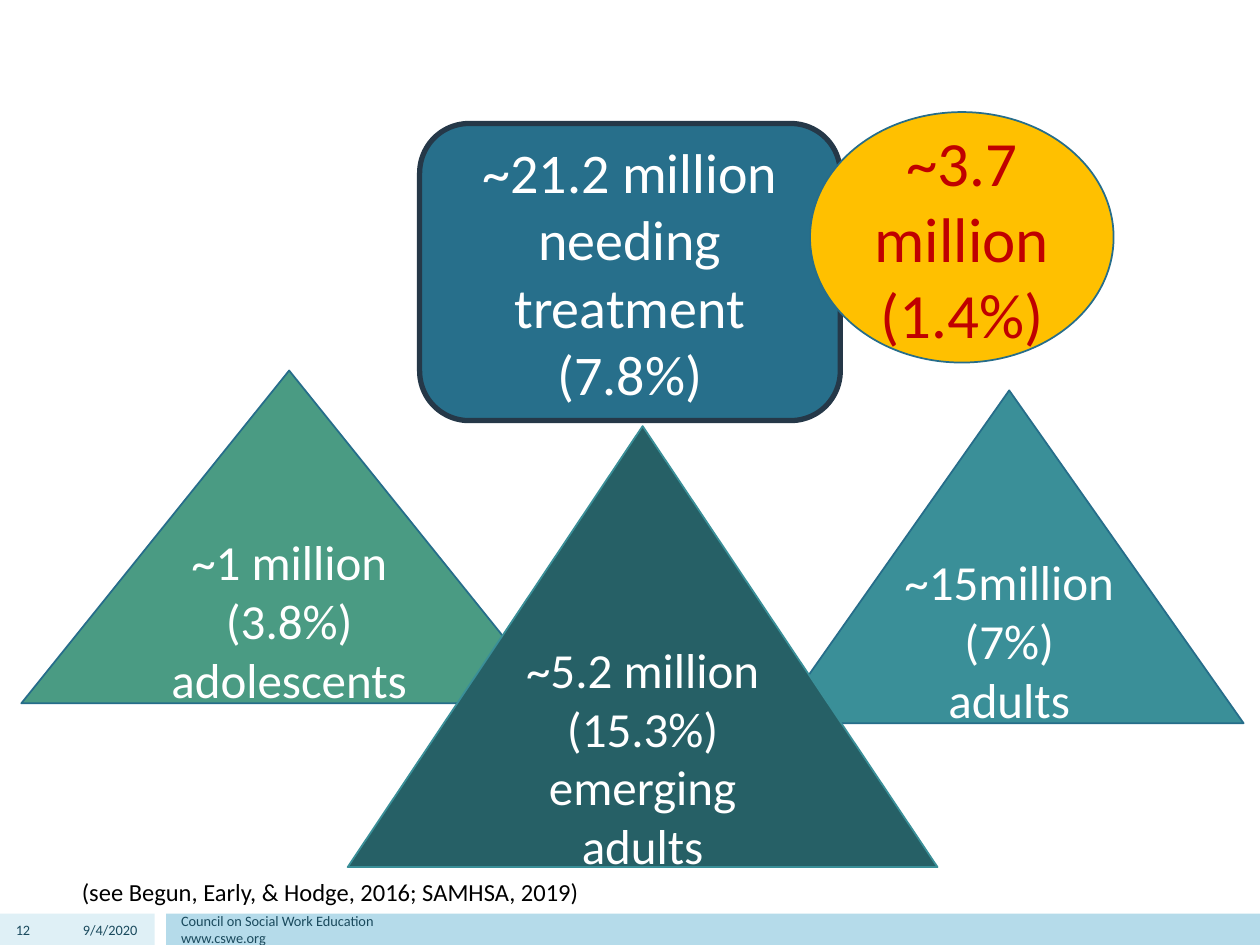
from pptx import Presentation
from pptx.dml.color import RGBColor
from pptx.enum.shapes import MSO_SHAPE as Shape
from pptx.enum.text import MSO_ANCHOR as Anchor, PP_ALIGN as Align
from pptx.util import Cm, Pt

COLORS = {
    "white": "FFFFFF", "black": "000000", "navy": "253848", "blue": "276F8B",
    "outline": "266D8A", "teal": "3A8F98", "green": "4A9B83", "dark_teal": "266066",
    "gold": "FFC000", "red": "C00000", "pale": "DFF0F6", "sky": "B5DBEA",
    "footer_text": "1A4A5D",
}


def color(name):
    """Return the named colour."""
    return RGBColor.from_string(COLORS[name])


def write_text(shape, text, size=28, ink="white", align=Align.CENTER,
               anchor=Anchor.MIDDLE, wrap=True):
    """Fill a shape with text, one paragraph per line."""
    frame = shape.text_frame
    frame.word_wrap = wrap
    frame.vertical_anchor = anchor
    frame.text = text
    for paragraph in frame.paragraphs:
        paragraph.alignment = align
        paragraph.font.name = "Calibri"
        paragraph.font.size = Pt(size)
        paragraph.font.color.rgb = color(ink)


def add_figure(slide, kind, box, fill, line=None, line_width=1):
    """Add a flat preset shape in a box given in centimetres."""
    shape = slide.shapes.add_shape(kind, *map(Cm, box))
    shape.shadow.inherit = False
    shape.fill.solid()
    shape.fill.fore_color.rgb = color(fill)
    if line:
        shape.line.color.rgb = color(line)
        shape.line.width = Pt(line_width)
    else:
        shape.line.fill.background()
    return shape


def add_label(slide, box, text, **text_format):
    """Add a text box in a box given in centimetres."""
    write_text(slide.shapes.add_textbox(*map(Cm, box)), text, **text_format)


def add_footer(slide, left, top, width, height):
    """Draw the footer bands with page number, date and organisation."""
    for offset, band_width, fill in ((0, 3.12, "pale"), (3.35, width - 3.35, "sky")):
        add_figure(slide, Shape.RECTANGLE, (left + offset, top, band_width, height), fill)
    labels = (
        (0, 0.86, "12", Align.RIGHT),
        (0.94, 2.08, "9/4/2020", Align.RIGHT),
        (3.4, 19.05, "Council on Social Work Education\nwww.cswe.org", Align.LEFT),
    )
    for offset, label_width, text, align in labels:
        add_label(slide, (left + offset, top, label_width, height), text,
                  size=8.2, ink="footer_text", align=align)


def add_treatment_diagram(slide, left, top):
    """Draw the treatment need totals and the three age group triangles."""
    triangle = Shape.ISOSCELES_TRIANGLE
    figures = (
        (triangle, (15.19, 5.61, 9.45, 6.71), "teal", "outline", 1,
         "~15million (7%) adults", 28, "white"),
        (Shape.ROUNDED_RECTANGLE, (8.03, 0.23, 8.48, 5.99), "blue", "navy", 3,
         "~21.2 million needing treatment\n(7.8%)", 32, "white"),
        (triangle, (0, 5.21, 10.8, 6.71), "green", "outline", 1,
         "~1 million (3.8%) adolescents", 28, "white"),
        (triangle, (6.58, 6.33, 11.89, 8.89), "dark_teal", "teal", 1,
         "~5.2 million\n(15.3%) emerging adults", 28, "white"),
        (Shape.OVAL, (15.9, 0, 6.12, 5.05), "gold", "outline", 1,
         "~3.7\nmillion (1.4%)", 36, "red"),
    )
    for kind, (x, y, width, height), fill, line, line_width, text, size, ink in figures:
        box = (left + x, top + y, width, height)
        shape = add_figure(slide, kind, box, fill, line, line_width)
        write_text(shape, text, size=size, ink=ink)


def main():
    """Build and save the slide."""
    presentation = Presentation()
    presentation.slide_width, presentation.slide_height = Cm(25.4), Cm(19.05)
    slide = presentation.slides.add_slide(presentation.slide_layouts[6])
    add_footer(slide, 0, 18.42, 25.4, 0.63)
    add_treatment_diagram(slide, 0.43, 2.26)
    add_label(slide, (1.4, 17.55, 10.74, 0.86),
              "(see Begun, Early, & Hodge, 2016; SAMHSA, 2019)",
              size=14, ink="black", align=Align.LEFT, anchor=Anchor.TOP, wrap=False)
    presentation.save("out.pptx")


if __name__ == "__main__":
    main()
